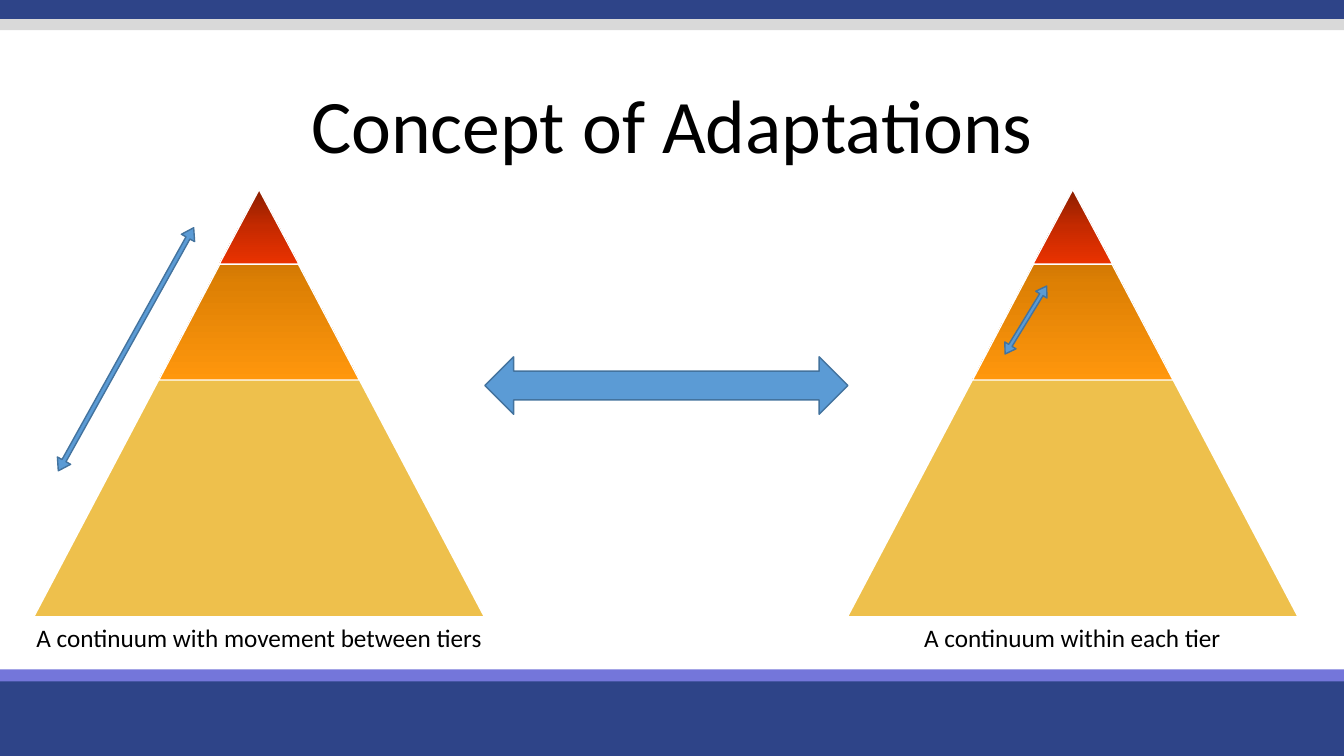
from copy import deepcopy
from typing import NamedTuple

from pptx import Presentation
from pptx.dml.color import RGBColor
from pptx.enum.shapes import MSO_SHAPE
from pptx.enum.text import MSO_ANCHOR, PP_ALIGN
from pptx.oxml.ns import qn
from pptx.util import Inches, Pt

RECT = MSO_SHAPE.RECTANGLE
CONE = MSO_SHAPE.ISOSCELES_TRIANGLE
ARROW = MSO_SHAPE.LEFT_RIGHT_ARROW
CENTER = PP_ALIGN.CENTER
MIDDLE = MSO_ANCHOR.MIDDLE
TOP = MSO_ANCHOR.TOP

NAVY = RGBColor(0x2E, 0x44, 0x88)
LILAC = RGBColor(0x74, 0x76, 0xDA)
GRAY = RGBColor(0xD9, 0xD9, 0xD9)
GOLD = RGBColor(0xEE, 0xC0, 0x4C)
AMBER = (RGBColor(0x9C, 0x5A, 0x03), RGBColor(0xDE, 0x80, 0x04), RGBColor(0xFF, 0x97, 0x0D))
RED = (RGBColor(0x8B, 0x1E, 0x00), RGBColor(0xC5, 0x2A, 0x00), RGBColor(0xEA, 0x32, 0x00))
BLUE = RGBColor(0x5B, 0x9B, 0xD5)
STEEL = RGBColor(0x43, 0x73, 0x9E)
BLACK = RGBColor(0, 0, 0)
WHITE = RGBColor(0xFF, 0xFF, 0xFF)

FONT = "Calibri"
WIDE = 13.33
PEAK = 1.88


class Box(NamedTuple):
    left: float
    top: float
    width: float
    height: float


class Band(NamedTuple):
    top: float
    height: float
    color: RGBColor


class Tier(NamedTuple):
    width: float
    height: float
    colors: tuple


class Arrow(NamedTuple):
    box: Box
    turn: float = 0
    shaft: float = 0.5
    head: float = 0.5


class Label(NamedTuple):
    text: str
    box: Box
    size: int
    anchor: MSO_ANCHOR = TOP
    space: float = 1.0


BANDS = [
    Band(6.7, 0.8, NAVY),
    Band(6.64, 0.12, LILAC),
    Band(0, 0.19, NAVY),
    Band(0.19, 0.11, GRAY),
]
TIERS = [
    Tier(4.47, 4.24, (GOLD,)),
    Tier(1.99, 1.89, AMBER),
    Tier(0.79, 0.74, RED),
]
MIDS = [2.57, 10.64]
ARROWS = [
    Arrow(Box(4.81, 3.54, 3.6, 0.57)),
    Arrow(Box(-0.13, 3.39, 2.76, 0.15), 299.1, 0.297, 0.771),
    Arrow(Box(9.78, 3.11, 0.79, 0.13), 301.4, 0.297, 0.771),
]
LABELS = [
    Label("Concept of Adaptations", Box(0, 0.69, WIDE, 1.18), 54, MIDDLE, 0.9),
    Label("A continuum with movement between tiers", Box(0.21, 6.12, 4.72, 0.4), 18),
    Label("A continuum within each tier", Box(8.79, 6.12, 3.69, 0.4), 18),
]


def place(box: Box) -> list:
    return [Inches(side) for side in box]


def paint(shape, colors: tuple) -> None:
    if len(colors) == 1:
        shape.fill.solid()
        shape.fill.fore_color.rgb = colors[0]
        return
    shape.fill.gradient()
    shape.fill.gradient_angle = 270
    stops = shape._element.spPr.find(".//" + qn("a:gsLst"))
    stops.insert(1, deepcopy(stops[0]))
    last = len(colors) - 1
    for rank, (stop, color) in enumerate(zip(shape.fill.gradient_stops, colors)):
        stop.position = rank / last
        stop.color.rgb = color


def draw(slide, kind: MSO_SHAPE, box: Box, colors: tuple, edge: RGBColor | None = None):
    shape = slide.shapes.add_shape(kind, *place(box))
    shape.shadow.inherit = False
    paint(shape, colors)
    if edge is None:
        shape.line.fill.background()
    else:
        shape.line.color.rgb = edge
        shape.line.width = Pt(1)
    return shape


def stack(slide, mid: float) -> None:
    for tier in TIERS:
        box = Box(mid - tier.width / 2, PEAK, tier.width, tier.height)
        draw(slide, CONE, box, tier.colors, WHITE)


def point(slide, arrow: Arrow) -> None:
    shape = draw(slide, ARROW, arrow.box, (BLUE,), STEEL)
    shape.rotation = arrow.turn
    shape.adjustments[0] = arrow.shaft
    shape.adjustments[1] = arrow.head


def write(slide, label: Label) -> None:
    frame = slide.shapes.add_textbox(*place(label.box)).text_frame
    frame.word_wrap = True
    frame.vertical_anchor = label.anchor
    para = frame.paragraphs[0]
    para.alignment = CENTER
    para.line_spacing = label.space
    run = para.add_run()
    run.text = label.text
    run.font.name = FONT
    run.font.size = Pt(label.size)
    run.font.color.rgb = BLACK


def main() -> None:
    deck = Presentation()
    deck.slide_width = Inches(WIDE)
    deck.slide_height = Inches(7.5)
    slide = deck.slides.add_slide(deck.slide_layouts[6])
    for band in BANDS:
        draw(slide, RECT, Box(0, band.top, WIDE, band.height), (band.color,))
    for mid in MIDS:
        stack(slide, mid)
    for label in LABELS:
        write(slide, label)
    for arrow in ARROWS:
        point(slide, arrow)
    deck.save("out.pptx")


if __name__ == "__main__":
    main()
